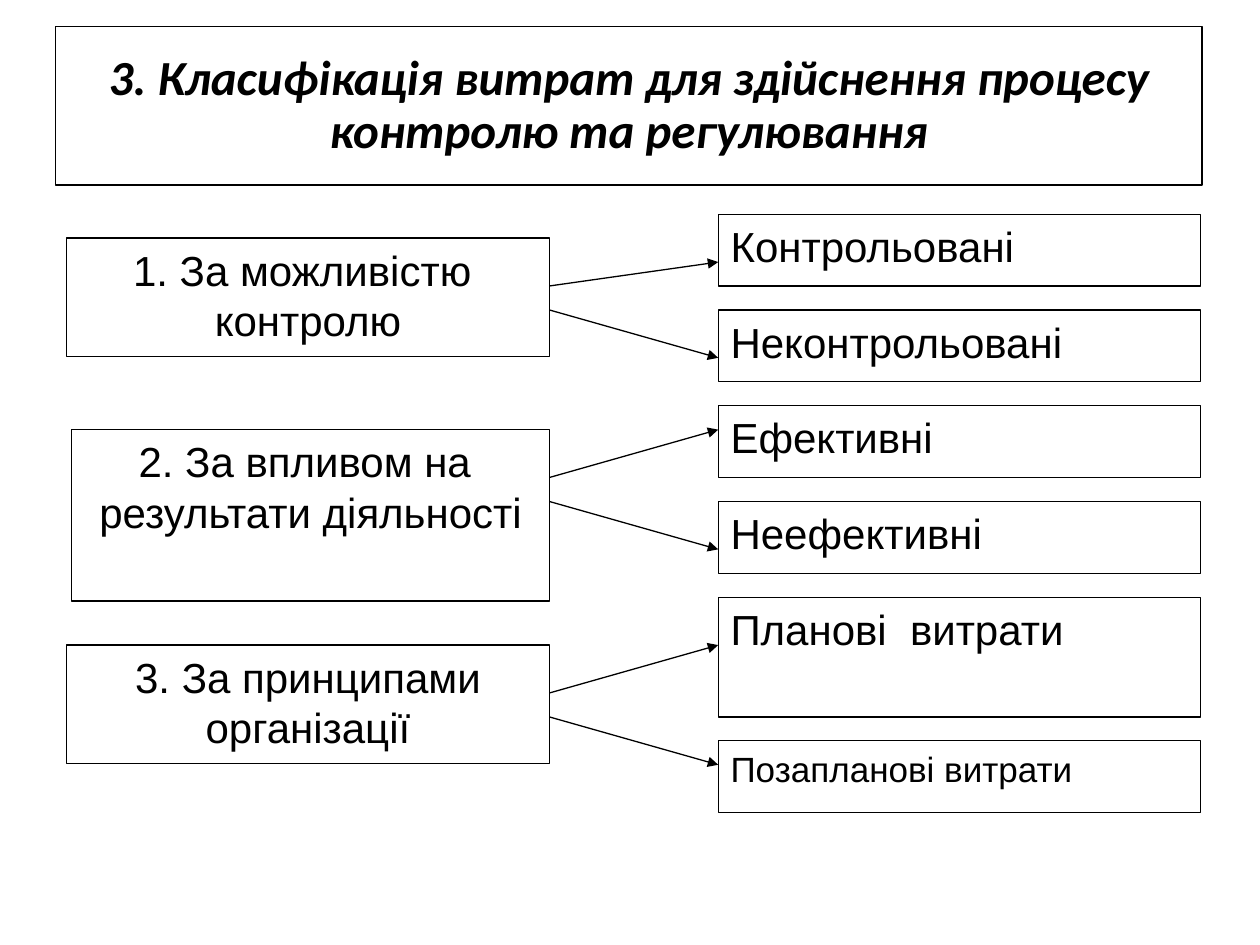
import pptx
import pptx.dml.color
import pptx.enum.shapes
import pptx.enum.text
import pptx.oxml
import pptx.oxml.ns
import pptx.util
from pptx.util import Inches

ALIGN = pptx.enum.text.PP_ALIGN
STEP = Inches(0.19)
BLACK, WHITE = "000000", "FFFFFF"

CRITERIA = [
    {
        "lines": ["1. За можливістю ", "контролю"],
        "inset": Inches(0), "top": 1, "height": Inches(0.94),
        "costs": [("Контрольовані", 0, 3, 24), ("Неконтрольовані ", 4, 3, 24)],
        "arrows": [(3, 2), (4, 6)],
    },
    {
        "lines": ["2. За впливом на ", "результати діяльності"],
        "inset": Inches(0.04), "top": 1, "height": Inches(1.36),
        "costs": [("Ефективні ", 0, 3, 24), ("Неефективні", 4, 3, 24)],
        "arrows": [(3, 1), (4, 6)],
    },
    {
        "lines": ["3. За принципами", "організації"],
        "inset": Inches(0), "top": 2, "height": Inches(0.94),
        "costs": [("Планові  витрати", 0, 5, 24), ("Позапланові витрати", 6, 3, 20)],
        "arrows": [(4, 2), (5, 7)],
    },
]


def rgb(color):
    return pptx.dml.color.RGBColor.from_string(color)


def outline(part):
    part.line.color.rgb = rgb(BLACK)
    part.line.width = pptx.util.Pt(0.75)


def write(paragraph, words, font_name, size, align):
    paragraph.alignment = align
    run = paragraph.add_run()
    run.text = words
    run.font.name = font_name
    run.font.size = pptx.util.Pt(size)
    run.font.color.rgb = rgb(BLACK)
    return run


def add_box(group, left, top, width, height, lines, size, align):
    box = group.shapes.add_shape(
        pptx.enum.shapes.MSO_SHAPE.RECTANGLE, left, top, width, height)
    box.shadow.inherit = False
    box.fill.solid()
    box.fill.fore_color.rgb = rgb(WHITE)
    outline(box)
    frame = box.text_frame
    frame.word_wrap = True
    frame.vertical_anchor = pptx.enum.text.MSO_ANCHOR.TOP
    for index, words in enumerate(lines):
        paragraph = frame.add_paragraph() if index else frame.paragraphs[0]
        write(paragraph, words, "Arial", size, align)


def add_arrow(group, start_x, start_y, end_x, end_y):
    arrow = group.shapes.add_connector(
        pptx.enum.shapes.MSO_CONNECTOR.STRAIGHT, start_x, start_y, end_x, end_y)
    outline(arrow)
    head = pptx.oxml.parse_xml(
        f'<a:tailEnd {pptx.oxml.ns.nsdecls("a")} type="triangle"/>')
    arrow.line._get_or_add_ln().append(head)
    arrow._element.spPr.append(
        pptx.oxml.parse_xml(f'<a:effectLst {pptx.oxml.ns.nsdecls("a")}/>'))


def place_title(slide, left, top, width, height):
    title = slide.shapes.title
    title.left, title.top, title.width, title.height = left, top, width, height
    outline(title)
    frame = title.text_frame
    frame.word_wrap = True
    frame.vertical_anchor = pptx.enum.text.MSO_ANCHOR.MIDDLE
    heading = frame.paragraphs[0]
    heading.line_spacing = 0.9
    run = write(
        heading,
        "3. Класифікація витрат для здійснення процесу контролю та регулювання",
        "Calibri", 28, ALIGN.CENTER)
    run.font.bold = True
    run.font.italic = True


def place_criterion(group, left, top, width, criterion):
    column = Inches(3.83)
    costs_left = left + width - column
    inset = criterion["inset"]
    add_box(group, left + inset, top + criterion["top"] * STEP, column - inset,
            criterion["height"], criterion["lines"], 24, ALIGN.CENTER)
    for words, offset, rows, size in criterion["costs"]:
        add_box(group, costs_left, top + offset * STEP, column, rows * STEP,
                [words], size, ALIGN.JUSTIFY)
    for start, end in criterion["arrows"]:
        add_arrow(group, left + column, top + start * STEP,
                  costs_left, top + end * STEP)


def main():
    deck = pptx.Presentation()
    deck.slide_width, deck.slide_height = Inches(10), Inches(7.5)
    slide = deck.slides.add_slide(deck.slide_layouts.get_by_name("Title Only"))
    place_title(slide, Inches(0.44), Inches(0.21), Inches(9.1), Inches(1.26))
    scheme = slide.shapes.add_group_shape()
    for index, criterion in enumerate(CRITERIA):
        place_criterion(scheme, Inches(0.53), Inches(1.7) + index * 8 * STEP,
                        Inches(9), criterion)
    deck.save("out.pptx")


if __name__ == "__main__":
    main()
